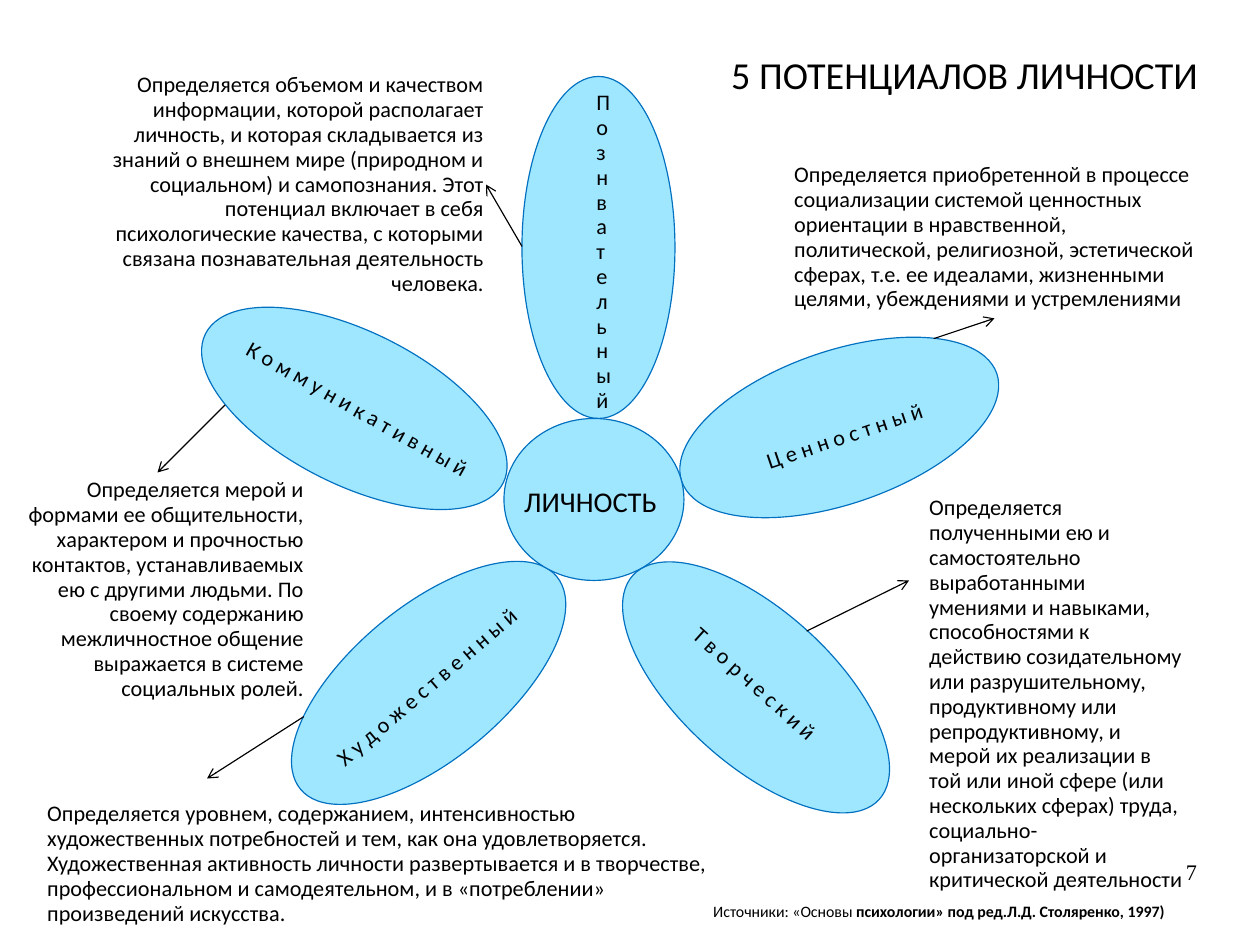
from lxml import etree
from pptx import Presentation
from pptx.dml.color import RGBColor
from pptx.enum.shapes import MSO_CONNECTOR as CONN, MSO_SHAPE as SHAPE
from pptx.enum.text import PP_ALIGN as AL
from pptx.oxml.ns import qn
from pptx.util import Pt

PX = 9000
LEFT, CENTER, RIGHT = AL.LEFT, AL.CENTER, AL.RIGHT


def rgb(color):
    return RGBColor.from_string(color)


def add_text(box, *runs, size=14, font="Calibri", align=LEFT, rot=0, spacing=0.93, inset=None):
    sp = s.shapes.add_textbox(*[v * PX for v in box])
    sp.rotation = rot
    tf = sp.text_frame
    tf.word_wrap = True
    if inset is not None:
        tf.margin_left = tf.margin_right = tf.margin_top = tf.margin_bottom = inset * PX
    p = tf.paragraphs[0]
    p.alignment = align
    p.line_spacing = spacing
    for i, text in enumerate(runs):
        r = p.add_run()
        r.text = text
        r.font.size = Pt(size)
        r.font.name = font
        r.font.bold = i > 0
        r.font.color.rgb = rgb("000000")


prs = Presentation()
prs.slide_width, prs.slide_height = 1120 * PX, 840 * PX
s = prs.slides.add_slide(prs.slide_layouts[6])

ellipses = [
    (464, 68, 136, 304, 0),
    (678, 232, 136, 296, 71.1),
    (604, 463, 136, 296, 132.3),
    (313, 459, 136, 296, 230.3),
    (247, 215, 136, 296, 296.6),
    (448, 372, 160, 144, 0),
]
for *box, rot in ellipses:
    sp = s.shapes.add_shape(SHAPE.OVAL, *[v * PX for v in box])
    sp.rotation = rot
    sp.shadow.inherit = False
    sp.fill.solid()
    sp.fill.fore_color.rgb = rgb("9FE6FF")
    sp.line.color.rgb = rgb("0070C0")
    sp.line.width = Pt(0.75)

add_text((456, 428, 152, 39), "ЛИЧНОСТЬ", size=18)
add_text((520, 76, 31, 300), "Познвательный")

petal_names = [
    ((623, 372, 256, 33), 341.3, "Ц е н н о с т н ы й"),
    ((526, 592, 288, 33), 41.8, "Т в о р ч е с к и й"),
    ((183, 348, 268, 33), 29.6, "К о м м у н и к а т и в н ы й"),
    ((252, 595, 256, 33), 319.5, "Х у д о ж е с т в е н н ы й"),
]
for box, rot, name in petal_names:
    add_text(box, name, align=CENTER, rot=rot)

descriptions = [
    ((64, 60, 376, 210), RIGHT,
     "Определяется объемом и качеством информации, которой располагает личность, "
     "и которая складывается из знаний о внешнем мире (природном и социальном) и самопознания. "
     "Этот потенциал включает в себя психологические качества, с которыми связана "
     "познавательная деятельность человека."),
    ((696, 140, 376, 144), LEFT,
     "Определяется приобретенной в процессе социализации системой ценностных ориентации "
     "в нравственной, политической, религиозной, эстетической сферах, т.е. ее идеалами, "
     "жизненными целями, убеждениями и устремлениями"),
    ((816, 436, 248, 367), LEFT,
     "Определяется полученными ею и самостоятельно выработанными умениями и навыками, "
     "способностями к действию созидательному или разрушительному, продуктивному или "
     "репродуктивному, и мерой их реализации в той или иной сфере (или нескольких сферах) "
     "труда, социально-организаторской и критической деятельности"),
    ((0, 420, 280, 210), RIGHT,
     "Определяется мерой и формами ее общительности, характером и прочностью контактов, "
     "устанавливаемых ею с другими людьми. По своему содержанию межличностное общение "
     "выражается в системе социальных ролей."),
    ((32, 708, 632, 122), LEFT,
     "Определяется уровнем, содержанием, интенсивностью художественных потребностей и тем, "
     "как она удовлетворяется. Художественная активность личности развертывается и в творчестве, "
     "профессиональном и самодеятельном, и в «потреблении» произведений искусства."),
]
for box, align, text in descriptions:
    add_text(box, text, align=align)

arrows = [
    (830, 301, 884, 283),
    (717, 561, 808, 516),
    (464, 219, 432, 164),
    (200, 360, 140, 420),
    (270, 637, 184, 692),
]
for ends in arrows:
    cx = s.shapes.add_connector(CONN.STRAIGHT, *[v * PX for v in ends])
    cx.line.color.rgb = rgb("000000")
    cx.line.width = Pt(0.75)
    ln = cx._element.spPr.find(qn("a:ln"))
    etree.SubElement(ln, qn("a:tailEnd"), type="arrow")
    etree.SubElement(cx._element.spPr, qn("a:effectLst"))

add_text((640, 44, 480, 49), "5 ПОТЕНЦИАЛОВ ЛИЧНОСТИ", size=24)
add_text((624, 798, 456, 42), "Источники: «Основы ",
         "психологии» под ред.Л.Д. Столяренко, 1997)", size=10)
add_text((803, 765, 261, 58), "7", font="Times New Roman", align=RIGHT, spacing=0.95, inset=0)

prs.save("out.pptx")
